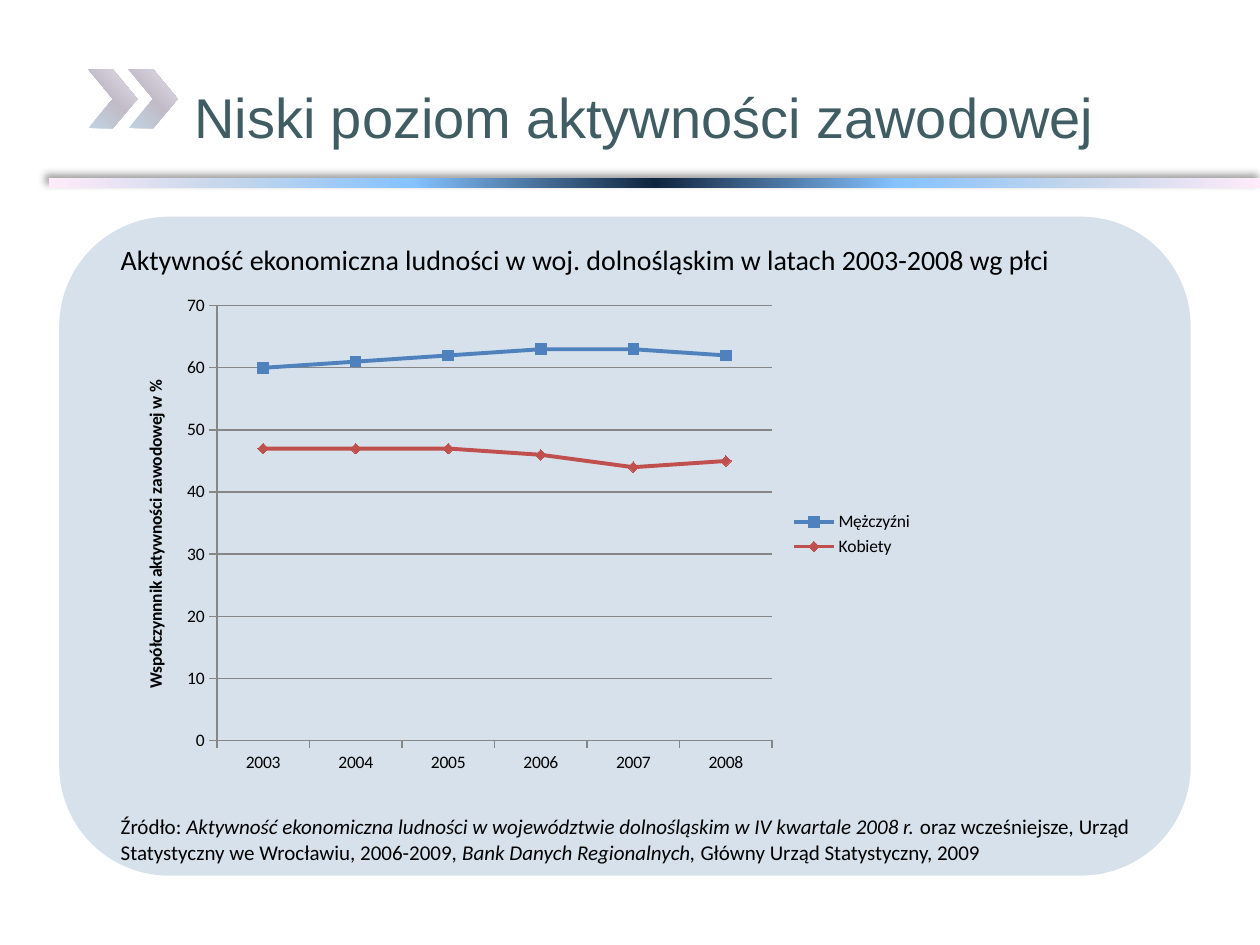
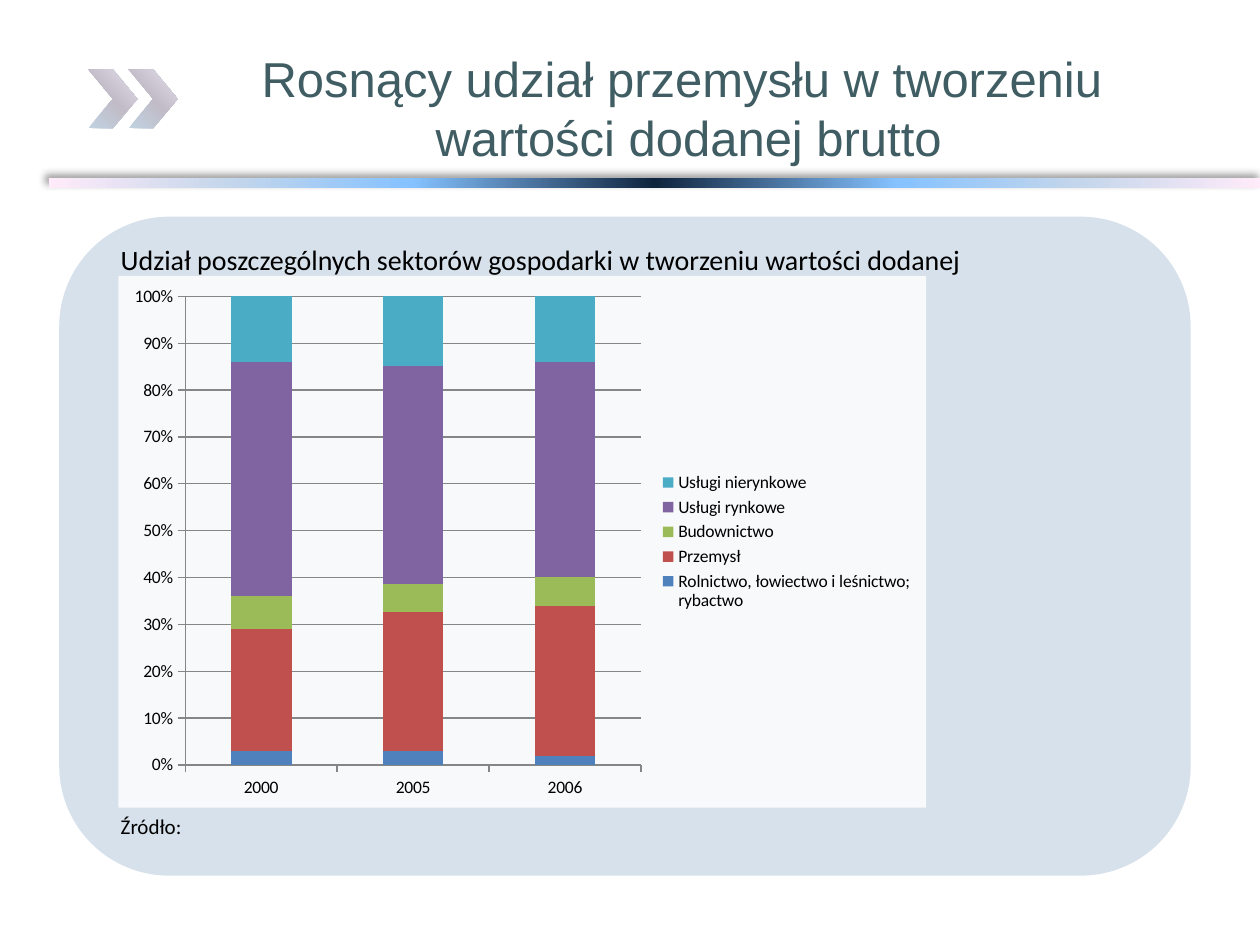
"""Two slides on economic activity and value added in Lower Silesia."""
from lxml import etree
from pptx import Presentation
from pptx import util as u
from pptx.chart.data import CategoryChartData
from pptx.dml.color import RGBColor
from pptx.enum import chart as charts, shapes, text
from pptx.oxml import parse_xml
from pptx.oxml.ns import nsdecls, qn

INK, TITLE, PANEL, AXIS = "000000", "3F5D63", "C1D2E1", "868686"
BLUE, RED, GREEN, PURPLE, TEAL = "4F81BD", "C0504D", "9BBB59", "8064A2", "4BACC6"
HALF_BAND = [(0, "FFEBFA"), (15, "C4D6EB"), (30, "85C2FF")]
BAND = HALF_BAND + [(50, "0F243E")] + [(100 - at, tone) for at, tone in reversed(HALF_BAND)]
CHEVRON = [(0, PANEL), (50, "C1BCC8"), (100, "E6DFED")]


def rgb(tone):
    """Turn a hex string into a colour."""
    return RGBColor.from_string(tone)


def box(left, top, width, height):
    """Turn four numbers into lengths in inches."""
    return [u.Inches(side) for side in (left, top, width, height)]


def style_font(font, size, face="Calibri", tone=INK, bold=False, italic=False):
    """Set every property of a font."""
    font.size, font.name = u.Pt(size), face
    font.bold, font.italic = bold, italic
    font.color.rgb = rgb(tone)


def write(paragraph, wording, **style):
    """Add formatted text, breaking the line at each newline."""
    for number, line in enumerate(wording.split("\n")):
        if number:
            paragraph.add_line_break()
        run = paragraph.add_run()
        run.text = line
        style_font(run.font, **style)


class Deck:
    """Holds the shared style and the current slide."""

    def __init__(self):
        """Open an empty 4:3 presentation."""
        self.show = Presentation()
        self.show.slide_width, self.show.slide_height = u.Inches(10), u.Inches(7.5)
        self.slide = None

    def shape(self, kind, place):
        """Add a preset shape without line or shadow."""
        item = self.slide.shapes.add_shape(kind, *box(*place))
        item.shadow.inherit = False
        item.line.fill.background()
        return item

    def gradient(self, kind, place, stops, angle):
        """Add a shape filled with a linear gradient."""
        item = self.shape(kind, place)
        item.fill.gradient()
        item.fill.gradient_angle = angle
        ramp = item._element.spPr.find(qn("a:gradFill")).find(qn("a:gsLst"))
        for stop in list(ramp):
            ramp.remove(stop)
        for at, tone in stops:
            stop = etree.SubElement(ramp, qn("a:gs"), pos=str(at * 1000))
            etree.SubElement(stop, qn("a:srgbClr"), val=tone)
        return item

    def band(self):
        """Add the shaded band under the title."""
        band = self.gradient(shapes.MSO_SHAPE.RECTANGLE, (0.39, 1.41, 9.61, 0.08), BAND, 0)
        effects = band._element.spPr.find(qn("a:effectLst"))
        shade = etree.SubElement(effects, qn("a:outerShdw"), blurRad=str(u.Pt(4)),
                                 dist=str(u.Pt(3)), dir=str(225 * 60000))
        tone = etree.SubElement(shade, qn("a:srgbClr"), val=INK)
        etree.SubElement(tone, qn("a:alpha"), val="40000")

    def panel(self):
        """Add the translucent rounded panel."""
        panel = self.shape(shapes.MSO_SHAPE.ROUNDED_RECTANGLE, (0.47, 1.72, 8.98, 5.23))
        panel.fill.solid()
        panel.fill.fore_color.rgb = rgb(PANEL)
        tone = panel._element.spPr.find(qn("a:solidFill")).find(qn("a:srgbClr"))
        etree.SubElement(tone, qn("a:alpha"), val="66000")

    def text(self, place, parts, centred=False, **style):
        """Add a text box of (wording, italic) parts."""
        frame = self.slide.shapes.add_textbox(*box(*place)).text_frame
        frame.word_wrap = True
        if centred:
            frame.vertical_anchor = text.MSO_ANCHOR.MIDDLE
            frame.paragraphs[0].alignment = text.PP_ALIGN.CENTER
        for wording, italic in parts:
            write(frame.paragraphs[0], wording, italic=italic, **style)

    def page(self, title, title_place, title_size, heading, source):
        """Start a slide with its frame, title, heading and source."""
        self.slide = self.show.slides.add_slide(self.show.slide_layouts[6])
        self.band()
        for left in (1.02, 0.7):
            self.gradient(shapes.MSO_SHAPE.CHEVRON, (left, 0.55, 0.39, 0.47), CHEVRON, 45)
        self.panel()
        self.text(title_place, [(title, False)], centred=True,
                  size=title_size, face="Arial", tone=TITLE)
        self.text((0.86, 1.88, 8.2, 0.37), [(heading, False)], size=16)
        self.text((0.86, 6.41, 8.2, 0.71), source, size=12)

    def chart(self, kind, place, years, series, number_format, backdrop):
        """Add a chart with a right legend and grey axes."""
        data = CategoryChartData()
        data.categories = years
        for name, values, _ in series:
            data.add_series(name, values)
        chart = self.slide.shapes.add_chart(kind, *box(*place), data).chart
        chart.has_title = False
        style_font(chart.font, 10)
        chart.has_legend = True
        chart.legend.position = charts.XL_LEGEND_POSITION.RIGHT
        chart.legend.include_in_layout = False
        chart.plots[0].vary_by_categories = False
        for axis in (chart.category_axis, chart.value_axis):
            axis.format.line.color.rgb = rgb(AXIS)
            axis.major_tick_mark = charts.XL_TICK_MARK.OUTSIDE
            axis.minor_tick_mark = charts.XL_TICK_MARK.NONE
        chart.value_axis.has_major_gridlines = True
        chart.value_axis.major_gridlines.format.line.color.rgb = rgb(AXIS)
        chart.value_axis.tick_labels.number_format = number_format
        chart.value_axis.tick_labels.number_format_is_linked = False
        chart.value_axis.minimum_scale = 0
        area = parse_xml(f"<c:spPr {nsdecls('c', 'a')}>{backdrop}<a:ln><a:noFill/></a:ln></c:spPr>")
        chart._chartSpace.find(qn("c:txPr")).addprevious(area)
        return chart

    def lines(self, place, years, series, axis_title):
        """Add a line chart with markers and a value axis title."""
        chart = self.chart(charts.XL_CHART_TYPE.LINE_MARKERS, place, years, series,
                           "General", "<a:noFill/>")
        axis = chart.value_axis
        axis.maximum_scale, axis.major_unit = 70, 10
        frame = axis.axis_title.text_frame
        write(frame.paragraphs[0], axis_title, size=10, bold=True)
        frame._element.bodyPr.set("rot", "-5400000")
        frame._element.bodyPr.set("vert", "horz")
        markers = (charts.XL_MARKER_STYLE.SQUARE, charts.XL_MARKER_STYLE.DIAMOND)
        for line, (_, _, tone), marker in zip(chart.plots[0].series, series, markers):
            line.smooth = False
            line.format.line.width = u.Pt(2.25)
            line.format.line.color.rgb = rgb(tone)
            line.marker.style, line.marker.size = marker, 6
            line.marker.format.fill.solid()
            line.marker.format.fill.fore_color.rgb = rgb(tone)
            line.marker.format.line.color.rgb = rgb(tone)

    def shares(self, place, years, series):
        """Add a column chart stacked to one hundred percent."""
        veil = '<a:solidFill><a:srgbClr val="FFFFFF"><a:alpha val="83000"/></a:srgbClr></a:solidFill>'
        chart = self.chart(charts.XL_CHART_TYPE.COLUMN_STACKED_100, place, years, series, "0%", veil)
        plot = chart.plots[0]
        plot.gap_width, plot.overlap = 150, 100
        for column, (_, _, tone) in zip(plot.series, series):
            column.format.fill.solid()
            column.format.fill.fore_color.rgb = rgb(tone)


def main():
    """Build both slides and save them."""
    deck = Deck()
    deck.page(
        "Niski poziom aktywności zawodowej", (1.25, 0.3, 7.73, 1.25), 32,
        "Aktywność ekonomiczna ludności w woj. dolnośląskim w latach 2003-2008 wg płci",
        [("Źródło: ", False),
         ("Aktywność ekonomiczna ludności w województwie dolnośląskim w IV kwartale 2008 r. ", True),
         ("oraz wcześniejsze", False), (",", True),
         (" Urząd Statystyczny we Wrocławiu, 2006-2009, ", False),
         ("Bank Danych Regionalnych,", True),
         (" Główny Urząd Statystyczny, 2009", False)])
    deck.lines(
        (0.94, 2.27, 6.41, 3.94), [str(year) for year in range(2003, 2009)],
        [("Mężczyźni", (60, 61, 62, 63, 63, 62), BLUE),
         ("Kobiety", (47, 47, 47, 46, 44, 45), RED)],
        "Współczynnnik aktywności zawodowej w %")

    deck.page(
        "Rosnący udział przemysłu w tworzeniu \nwartości dodanej brutto",
        (1.95, 0.23, 7.03, 1.25), 28,
        "Udział poszczególnych sektorów gospodarki w tworzeniu wartości dodanej",
        [("Źródło:", False)])
    deck.shares(
        (0.94, 2.19, 6.41, 4.22), ["2000", "2005", "2006"],
        [("Rolnictwo, łowiectwo i leśnictwo; rybactwo", (3, 3, 2), BLUE),
         ("Przemysł", (26, 30, 32), RED),
         ("Budownictwo", (7, 6, 6), GREEN),
         ("Usługi rynkowe", (50, 47, 46), PURPLE),
         ("Usługi nierynkowe", (14, 15, 14), TEAL)])
    deck.show.save("out.pptx")


if __name__ == "__main__":
    main()
